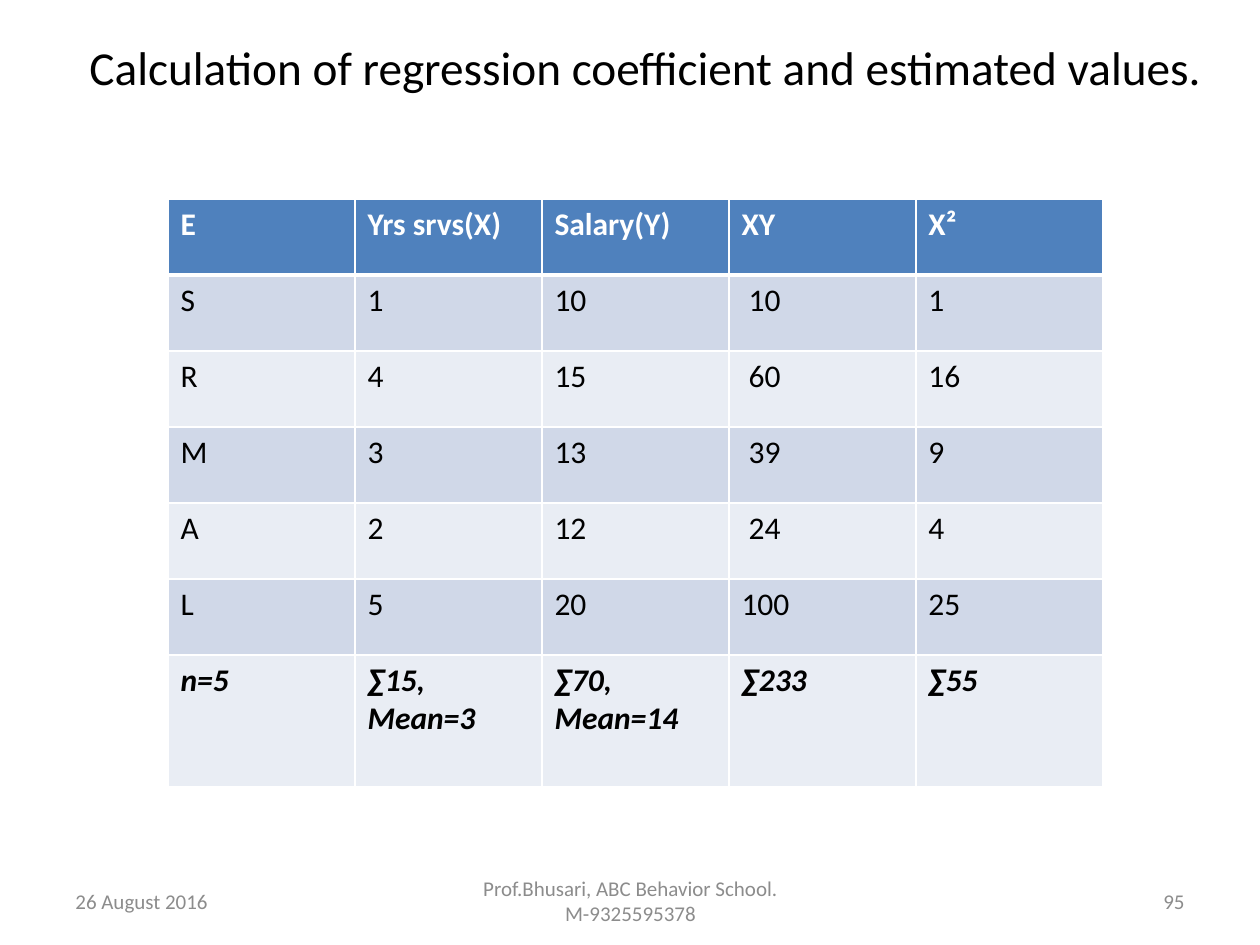
"""Build the slide with the regression coefficient table."""
from dataclasses import dataclass

import lxml.etree
import pptx
import pptx.dml.color
import pptx.enum.text
import pptx.oxml.ns
import pptx.util

PX = 914400 / 126
FONT = "Calibri"
WHITE, BLACK, GREY = "FFFFFF", "000000", "8C8C8C"
HEADER, BANDS = "4F81BD", ("D0D8E8", "E9EDF4")
ALIGN = pptx.enum.text.PP_ALIGN
MIDDLE = pptx.enum.text.MSO_ANCHOR.MIDDLE

TITLE = "Calculation of regression coefficient and estimated values. "
ROWS = (
    ("E", "Yrs srvs(X)", "Salary(Y)", "XY", "X²"),
    ("S", "1", "10", " 10", "1"),
    ("R", "4", "15", " 60", "16"),
    ("M", "3", "13", " 39", "9"),
    ("A", "2", "12", " 24", "4"),
    ("L", "5", "20", "100", "25"),
    ("n=5", "∑15, Mean=3", "∑70, Mean=14", "∑233", "∑55"),
)
TABLE_LEFT, TABLE_TOP, COL_W, ROW_H, TOTAL_H = 168, 199, 187, 76, 132


@dataclass(frozen=True)
class Footer:
    text: str
    left: int
    width: int
    align: ALIGN


FOOTERS = (
    Footer("26 August 2016", 63, 294, ALIGN.LEFT),
    Footer("Prof.Bhusari, ABC Behavior School. M-9325595378", 431, 399, ALIGN.CENTER),
    Footer("95", 903, 294, ALIGN.RIGHT),
)


def emu(px: int) -> pptx.util.Emu:
    return pptx.util.Emu(round(px * PX))


def rgb(color: str) -> pptx.dml.color.RGBColor:
    return pptx.dml.color.RGBColor.from_string(color)


def write(tf, text: str, *, size: int, color: str = BLACK, bold: bool = False,
          italic: bool = False, align: ALIGN = ALIGN.LEFT) -> None:
    tf.word_wrap = True
    p = tf.paragraphs[0]
    p.alignment = align
    r = p.add_run()
    r.text = text
    r.font.name, r.font.size = FONT, pptx.util.Pt(size)
    r.font.bold, r.font.italic = bold, italic
    r.font.color.rgb = rgb(color)


def set_borders(cell, bottom: int) -> None:
    tc_pr = cell._tc.get_or_add_tcPr()
    qn = pptx.oxml.ns.qn
    for i, (tag, pt) in enumerate((("lnL", 1), ("lnR", 1), ("lnT", 1), ("lnB", bottom))):
        ln = lxml.etree.Element(qn(f"a:{tag}"), w=str(pptx.util.Pt(pt)))
        fill = lxml.etree.SubElement(ln, qn("a:solidFill"))
        lxml.etree.SubElement(fill, qn("a:srgbClr"), val=WHITE)
        tc_pr.insert(i, ln)


def add_title(s) -> None:
    sp = s.shapes.title
    sp.left, sp.top, sp.width, sp.height = map(emu, (73, 38, 1155, 57))
    tf = sp.text_frame
    tf.auto_size = pptx.enum.text.MSO_AUTO_SIZE.NONE
    tf.vertical_anchor = MIDDLE
    write(tf, TITLE, size=27, align=ALIGN.CENTER)


def add_data_table(s) -> None:
    last = len(ROWS) - 1
    n_cols = len(ROWS[0])
    table = s.shapes.add_table(
        len(ROWS), n_cols, emu(TABLE_LEFT), emu(TABLE_TOP),
        emu(n_cols * COL_W), emu(last * ROW_H + TOTAL_H)).table
    for col in table.columns:
        col.width = emu(COL_W)
    for i, values in enumerate(ROWS):
        is_header, is_total = i == 0, i == last
        table.rows[i].height = emu(TOTAL_H if is_total else ROW_H)
        for j, value in enumerate(values):
            cell = table.cell(i, j)
            cell.fill.solid()
            cell.fill.fore_color.rgb = rgb(HEADER if is_header else BANDS[(i - 1) % 2])
            set_borders(cell, 3 if is_header else 1)
            write(cell.text_frame, value, size=18, color=WHITE if is_header else BLACK,
                  bold=is_header or is_total, italic=is_total)


def add_footer(s, footer: Footer) -> None:
    sp = s.shapes.add_textbox(*map(emu, (footer.left, 876, footer.width, 50)))
    sp.text_frame.vertical_anchor = MIDDLE
    write(sp.text_frame, footer.text, size=12, color=GREY, align=footer.align)


def main() -> None:
    prs = pptx.Presentation()
    prs.slide_width, prs.slide_height = emu(1260), emu(945)
    s = prs.slides.add_slide(prs.slide_layouts[5])
    add_title(s)
    add_data_table(s)
    for footer in FOOTERS:
        add_footer(s, footer)
    prs.save("out.pptx")


if __name__ == "__main__":
    main()
